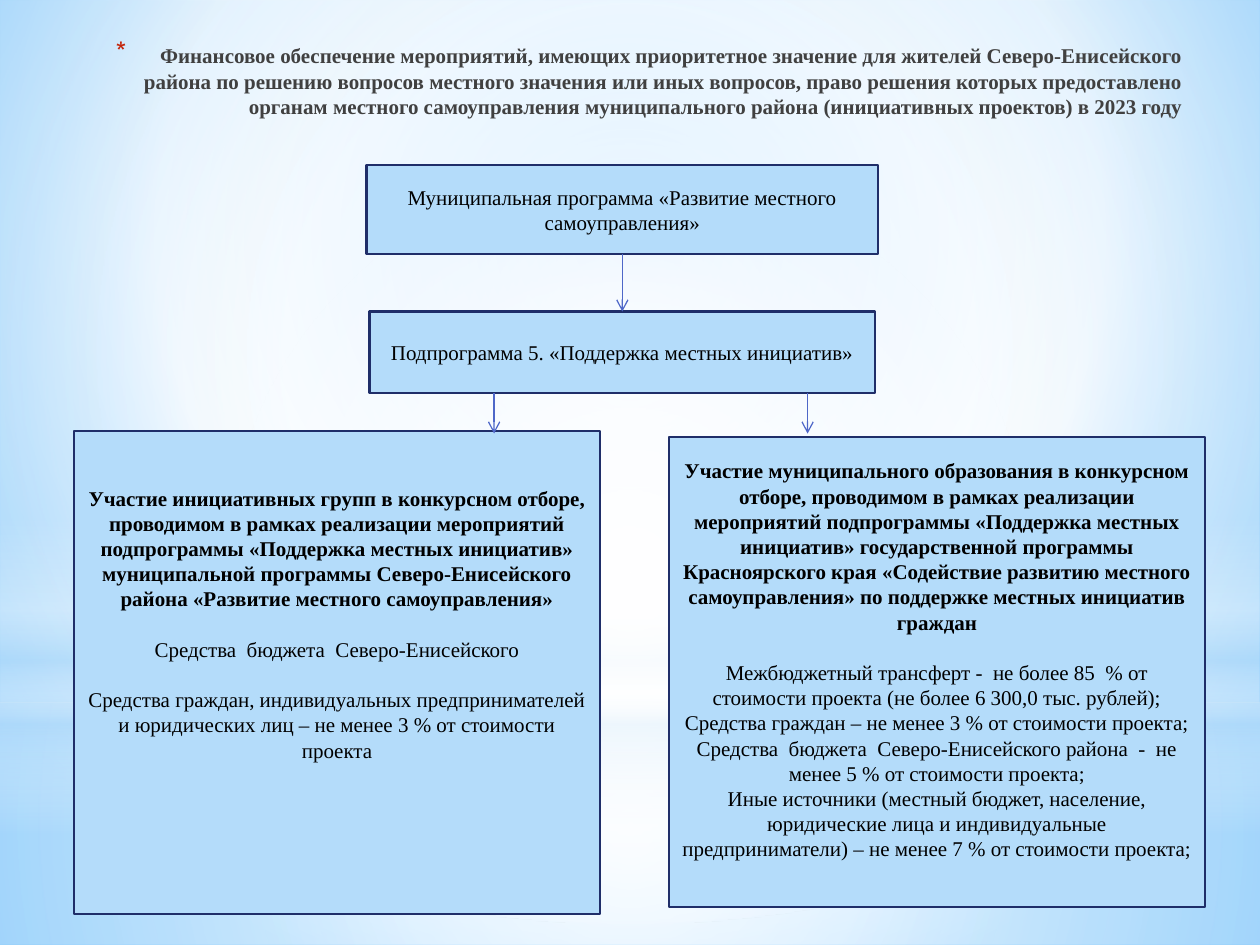
from lxml import etree
from pptx import Presentation
from pptx import util as u
from pptx.dml.color import RGBColor
from pptx.enum import shapes, text
from pptx.oxml import parse_xml
from pptx.oxml.ns import nsdecls, qn

HUES = {"sky": "9ED5FF", "rim": "5BB9FF", "white": "FFFFFF", "pale": "B4DCFA",
        "navy": "1F2E69", "blue": "4E67C8", "black": "000000",
        "gray": "404040", "red": "C3260C"}
FONT = "Times New Roman"
LEFT, MID = text.PP_ALIGN.LEFT, text.PP_ALIGN.CENTER
KIND = shapes.MSO_SHAPE


def hue(name):
    return RGBColor.from_string(HUES[name])


def place(box, x, y, w, h):
    """Turn a place inside a box, in cm, into slide lengths."""
    return [u.Cm(n) for n in (box[0] + x, box[1] + y, w, h)]


def blend(fill, root, stops, focus=None):
    """Give a gradient of (place, hue, opacity) stops, round if it has a focus."""
    fill.solid()
    marks = "".join(
        f'<a:gs pos="{at * 1000}"><a:srgbClr val="{HUES[name]}">'
        f'<a:alpha val="{seen * 1000}"/></a:srgbClr></a:gs>'
        for at, name, seen in stops)
    if focus:
        sides = " ".join(f'{k}="{n * 1000}"' for k, n in zip("ltrb", focus))
        form = f'<a:path path="circle"><a:fillToRect {sides}/></a:path>'
    else:
        form = '<a:lin ang="5400000" scaled="0"/>'
    grad = parse_xml(f'<a:gradFill {nsdecls("a")} rotWithShape="1">'
                     f'<a:gsLst>{marks}</a:gsLst>{form}</a:gradFill>')
    old = next(root.iter(qn("a:solidFill")))
    old.getparent().replace(old, grad)


def write(frame, words, bold=False, color="black", align=MID, gap=0, first=False):
    """Add one paragraph, with a gap above it in points."""
    par = frame.paragraphs[0] if first else frame.add_paragraph()
    par.alignment = align
    par.space_before = u.Pt(gap)
    run = par.add_run()
    run.text = words
    font = run.font
    font.name, font.size, font.bold = FONT, u.Pt(12), bold
    font.color.rgb = hue(color)
    return par


def back(slide, box):
    wide = box[2]
    core = (50, 50, 50, 50)
    blend(slide.background.fill, slide.element,
          [(0, "sky", 100), (60, "white", 100), (100, "rim", 100)], (20, 10, 20, 60))
    layers = [
        (KIND.RECTANGLE, 14.17, 4.88, core,
         [(0, "white", 91), (37, "white", 76), (100, "pale", 79)]),
        (KIND.RECTANGLE, 0, 14.17, core,
         [(0, "white", 89), (48, "white", 62), (100, "pale", 79)]),
        (KIND.RECTANGLE, 10.46, 6.35, None,
         [(0, "white", 0), (29, "white", 30), (45, "pale", 40),
          (55, "white", 26), (65, "pale", 60), (100, "white", 0)]),
        (KIND.OVAL, 4.45, 14.17, core, [(0, "white", 100), (56, "white", 0)]),
    ]
    for kind, top, high, focus, stops in layers:
        layer = slide.shapes.add_shape(kind, *place(box, 0, top, wide, high))
        layer.shadow.inherit = False
        layer.line.fill.background()
        blend(layer.fill, layer.element.spPr, stops, focus)


def head(slide, box, words):
    frame = slide.shapes.add_textbox(*place(box, 0, 0, *box[2:])).text_frame
    frame.word_wrap = True
    par = write(frame, words, bold=True, color="gray",
                align=text.PP_ALIGN.RIGHT, first=True)
    props = par._p.get_or_add_pPr()
    props.set("marL", str(u.Cm(0.89)))
    props.set("indent", str(u.Cm(-0.89)))
    tint = etree.SubElement(props, qn("a:buClr"))
    etree.SubElement(tint, qn("a:srgbClr")).set("val", HUES["red"])
    etree.SubElement(props, qn("a:buSzPct")).set("val", "128000")
    etree.SubElement(props, qn("a:buChar")).set("char", "*")


def card(slide, spot, lines, inset=None):
    """Draw a box of (words, format) lines, centred unless a top inset is given."""
    shape = slide.shapes.add_shape(KIND.RECTANGLE, *spot)
    shape.shadow.inherit = False
    shape.fill.solid()
    shape.fill.fore_color.rgb = hue("pale")
    shape.line.color.rgb = hue("navy")
    shape.line.width = u.Pt(1.25)
    frame = shape.text_frame
    frame.word_wrap = True
    frame.vertical_anchor = text.MSO_ANCHOR.MIDDLE
    if inset is not None:
        frame.vertical_anchor = text.MSO_ANCHOR.TOP
        frame.margin_top = u.Cm(inset)
    for i, (words, form) in enumerate(lines):
        write(frame, words, first=i == 0, **form)
    return shape


def arrow(slide, box, x, top, end):
    x, top, _, _ = place(box, x, top, 0, 0)
    end = u.Cm(box[1] + end)
    line = slide.shapes.add_connector(shapes.MSO_CONNECTOR.STRAIGHT, x, top, x, end)
    line.line.color.rgb = hue("blue")
    line.line.width = u.Pt(0.75)
    tip = etree.SubElement(line.line._get_or_add_ln(), qn("a:tailEnd"))
    tip.set("type", "arrow")
    etree.SubElement(line.element.spPr, qn("a:effectLst"))
    return line


def flow(slide, box):
    """Draw the programme, its part and the two contests below."""
    bold, apart = {"bold": True}, {"gap": 14.4}
    main = card(slide, place(box, 5.89, 0, 10.31, 1.8), [
        ("Муниципальная программа «Развитие местного самоуправления»", {})])
    part = card(slide, place(box, 5.95, 2.95, 10.19, 1.65), [
        ("Подпрограмма 5. «Поддержка местных инициатив»", {})])
    card(slide, place(box, 0, 5.36, 10.59, 9.73), [
        ("Участие инициативных групп в конкурсном отборе, проводимом в рамках "
         "реализации мероприятий подпрограммы «Поддержка местных инициатив» "
         "муниципальной программы Северо-Енисейского района «Развитие местного "
         "самоуправления»", bold),
        ("Средства  бюджета  Северо-Енисейского", apart),
        ("Средства граждан, индивидуальных предпринимателей и юридических лиц – "
         "не менее 3 % от стоимости проекта", apart)], inset=1.09)
    card(slide, place(box, 11.99, 5.48, 10.8, 9.47), [
        ("Участие муниципального образования в конкурсном отборе, проводимом в "
         "рамках реализации мероприятий подпрограммы «Поддержка местных инициатив» "
         "государственной программы Красноярского края «Содействие развитию "
         "местного самоуправления» по поддержке местных инициатив граждан", bold),
        ("Межбюджетный трансферт -  не более 85  % от стоимости проекта "
         "(не более 6 300,0 тыс. рублей);", apart),
        ("Средства граждан – не менее 3 % от стоимости проекта;", {}),
        ("Средства  бюджета  Северо-Енисейского района  -  не менее 5 % от "
         "стоимости проекта;", {}),
        ("Иные источники (местный бюджет, население, юридические лица и "
         "индивидуальные предприниматели) – не менее 7 % от стоимости проекта;", {}),
    ], inset=0.42)
    link = arrow(slide, box, 11.05, 1.8, 2.95)
    link.begin_connect(main, 2)
    link.end_connect(part, 0)
    for x in (8.46, 14.78):
        arrow(slide, box, x, 4.6, 5.41)


def main():
    deck = Presentation()
    deck.slide_width, deck.slide_height = u.Cm(25.4), u.Cm(19.05)
    slide = deck.slides.add_slide(deck.slide_layouts[6])
    back(slide, (0, 0, 25.4, 19.05))
    head(slide, (1.24, 0.74, 22.86, 1.55),
         "Финансовое обеспечение мероприятий, имеющих приоритетное значение для "
         "жителей Северо-Енисейского района по решению вопросов местного значения "
         "или иных вопросов, право решения которых предоставлено органам местного "
         "самоуправления муниципального района (инициативных проектов) в 2023 году")
    flow(slide, (1.5, 3.33, 22.79, 15.09))
    deck.save("out.pptx")


if __name__ == "__main__":
    main()
